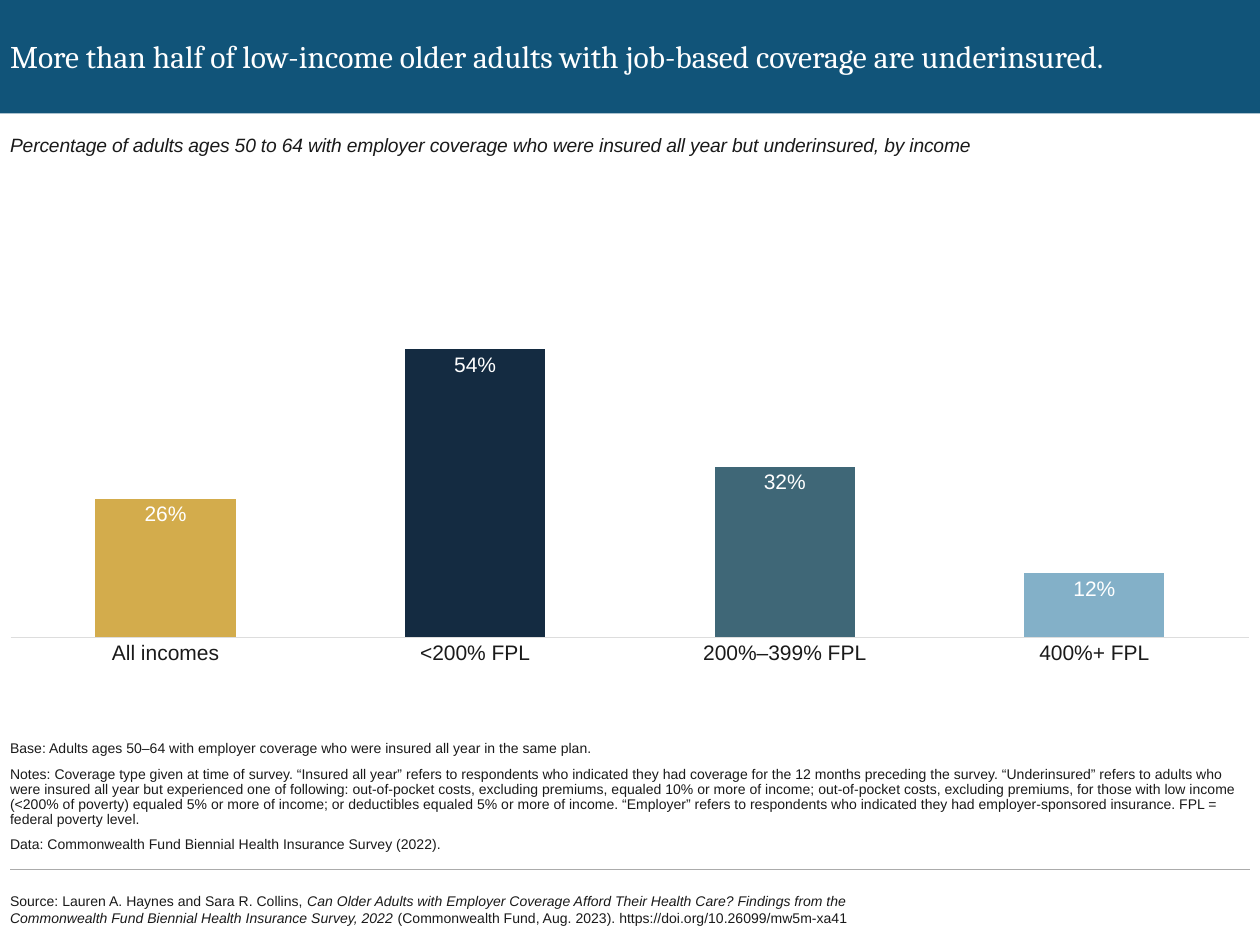
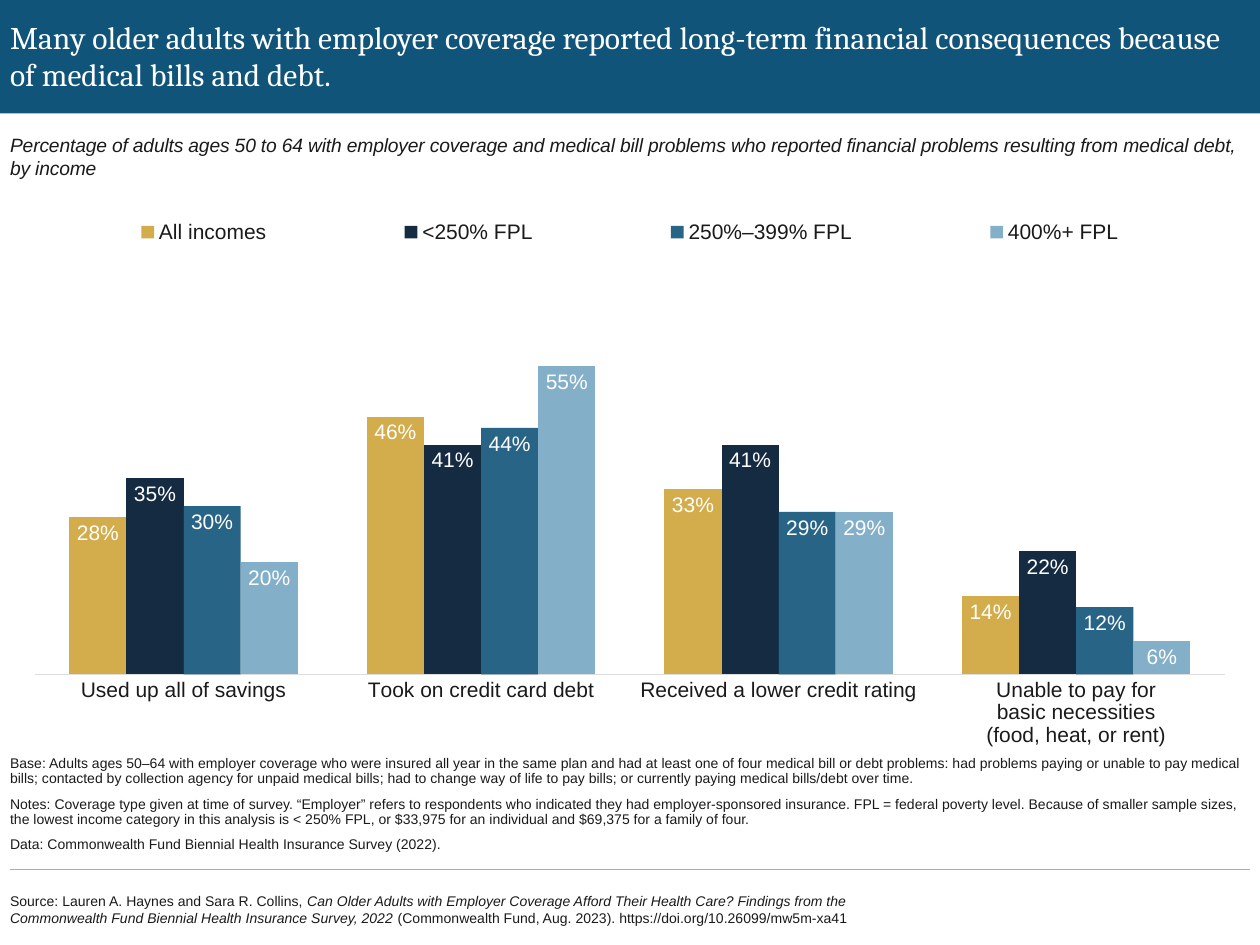
from dataclasses import dataclass

from lxml import etree
from pptx import Presentation
from pptx.chart.data import CategoryChartData
from pptx.dml.color import RGBColor
from pptx.enum.chart import XL_CHART_TYPE, XL_LABEL_POSITION, XL_LEGEND_POSITION, XL_TICK_MARK
from pptx.enum.shapes import MSO_CONNECTOR, MSO_SHAPE
from pptx.enum.text import MSO_ANCHOR, MSO_AUTO_SIZE, PP_ALIGN
from pptx.oxml.ns import qn
from pptx.util import Pt

COLUMNS = XL_CHART_TYPE.COLUMN_CLUSTERED
INSIDE_END = XL_LABEL_POSITION.INSIDE_END
LEGEND_TOP = XL_LEGEND_POSITION.TOP
NO_TICKS = XL_TICK_MARK.NONE
TOP, MIDDLE, BOTTOM = MSO_ANCHOR.TOP, MSO_ANCHOR.MIDDLE, MSO_ANCHOR.BOTTOM
TWO_CONTENT_LAYOUT = 3


@dataclass(frozen=True)
class Theme:
    # Colours
    band: str = "115479"
    ink: str = "1A1A1A"
    white: str = "FFFFFF"
    rule: str = "ABABAB"
    axis: str = "DDDDDD"
    gold: str = "D3AC4C"
    navy: str = "142B41"
    slate: str = "3F6777"
    sky: str = "83B0C8"
    # Fonts and sizes
    heading_font: str = "Cambria"
    body_font: str = "Arial"
    title_size: float = 18
    subtitle_size: float = 11
    chart_size: float = 12
    chart_base_size: float = 10
    note_size: float = 8
    # Lengths in points
    width: float = 720
    height: float = 540
    margin: float = 5.76
    band_height: float = 64.8

    @property
    def content_width(self):
        return self.width - 2 * self.margin


THEME = Theme()

SOURCE = [
    ("Source: Lauren A. Haynes and Sara R. Collins, ", False),
    ("Can Older Adults with Employer Coverage Afford Their Health Care? Findings from the\n"
     "Commonwealth Fund Biennial Health Insurance Survey, 2022", True),
    (" (Commonwealth Fund, Aug. 2023). https://doi.org/10.26099/mw5m-xa41", False),
]
DATA_NOTE = "Data: Commonwealth Fund Biennial Health Insurance Survey (2022)."


def set_font(font, size, color=THEME.ink, name=THEME.body_font, italic=False):
    font.size, font.name, font.italic = Pt(size), name, italic
    font.color.rgb = RGBColor.from_string(color)


def add_text(paragraph, text, spacing=None, **font_format):
    """Append text to a paragraph; each newline becomes a line break."""
    for number, line in enumerate(text.split("\n")):
        if number:
            paragraph.add_line_break()
        run = paragraph.add_run()
        run.text = line
        set_font(run.font, **font_format)
        if spacing is not None:
            run.font._element.set("spc", str(round(spacing * 100)))


def manual_layout(x, y, w, h, inner=False):
    """Return a chart layout element, in fractions of the chart area."""
    layout = etree.Element(qn("c:layout"))
    manual = etree.SubElement(layout, qn("c:manualLayout"))
    settings = [("layoutTarget", "inner")] if inner else []
    settings += [("xMode", "edge"), ("yMode", "edge"), ("x", x), ("y", y), ("w", w), ("h", h)]
    for tag, value in settings:
        etree.SubElement(manual, qn(f"c:{tag}")).set("val", str(value))
    return layout


class Deck:
    def __init__(self, theme):
        self.theme = theme
        self.presentation = Presentation()
        self.presentation.slide_width = Pt(theme.width)
        self.presentation.slide_height = Pt(theme.height)
        self.slide = None

    def new_slide(self, title, subtitle, notes):
        t = self.theme
        layout = self.presentation.slide_layouts[TWO_CONTENT_LAYOUT]
        self.slide = self.slide = self.presentation.slides.add_slide(layout)
        title_holder, subtitle_holder, notes_holder = self.slide.placeholders
        self.frame()
        self.fill_holder(title_holder, [title], -0.72, t.band_height, MIDDLE,
                         size=t.title_size, color=t.white, name=t.heading_font)
        self.fill_holder(subtitle_holder, [subtitle], 76.32, 23.04, TOP,
                         size=t.subtitle_size, italic=True, spacing=-0.1)
        self.fill_holder(notes_holder, notes, 448.56, 38.88, BOTTOM,
                         line_spacing=0.9, space_after=6, size=t.note_size)

    def frame(self):
        """Draw the title band, the footer rule and the source line."""
        t = self.theme
        shapes = self.slide.shapes
        band = shapes.add_shape(MSO_SHAPE.RECTANGLE, 0, 0, Pt(t.width), Pt(t.band_height))
        band.shadow.inherit = False
        band.fill.solid()
        band.fill.fore_color.rgb = RGBColor.from_string(t.band)
        band.line.fill.background()
        shapes._spTree.insert(2, band._element)  # behind the title

        rule = shapes.add_connector(MSO_CONNECTOR.STRAIGHT, Pt(t.width - t.margin), Pt(496.8),
                                    Pt(t.margin), Pt(496.8))
        rule.line.color.rgb = RGBColor.from_string(t.rule)
        rule.line.width = Pt(0.75)
        etree.SubElement(rule._element.spPr, qn("a:effectLst"))

        source = shapes.add_textbox(Pt(t.margin), Pt(503.28), Pt(561.6), Pt(33.12))
        self.set_frame(source.text_frame, MIDDLE)
        for text, italic in SOURCE:
            add_text(source.text_frame.paragraphs[0], text, size=t.note_size, italic=italic)

    def set_frame(self, frame, anchor):
        frame.word_wrap = True
        frame.auto_size = MSO_AUTO_SIZE.NONE
        frame.vertical_anchor = anchor
        frame.margin_left = frame.margin_right = frame.margin_top = frame.margin_bottom = 0

    def fill_holder(self, holder, texts, top, height, anchor,
                    line_spacing=1.0, space_after=0, **font_format):
        holder.left, holder.top = Pt(self.theme.margin), Pt(top)
        holder.width, holder.height = Pt(self.theme.content_width), Pt(height)
        frame = holder.text_frame
        self.set_frame(frame, anchor)
        for number, text in enumerate(texts):
            paragraph = frame.add_paragraph() if number else frame.paragraphs[0]
            properties = paragraph._p.get_or_add_pPr()
            properties.set("marL", "0")
            properties.set("indent", "0")
            etree.SubElement(properties, qn("a:buNone"))
            paragraph.alignment = PP_ALIGN.LEFT
            paragraph.line_spacing = line_spacing
            paragraph.space_before, paragraph.space_after = Pt(0), Pt(space_after)
            add_text(paragraph, text, **font_format)

    def column_chart(self, categories, series, height, maximum, plot_area,
                     colors, opacity=None, legend_area=None):
        """Colour by series, or by column when there is only one series."""
        t = self.theme
        data = CategoryChartData(number_format="0%")
        data.categories = categories
        for name, values in series.items():
            data.add_series(name, values)
        chart = self.slide.shapes.add_chart(COLUMNS, Pt(t.margin), Pt(99.36),
                                            Pt(t.content_width), Pt(height), data).chart
        set_font(chart.font, t.chart_base_size)
        chart.has_title = False

        # Axes
        chart.value_axis.visible = False
        chart.value_axis.has_major_gridlines = False
        chart.value_axis.minimum_scale, chart.value_axis.maximum_scale = 0, maximum
        category_axis = chart.category_axis
        category_axis.major_tick_mark = NO_TICKS
        category_axis.format.line.color.rgb = RGBColor.from_string(t.axis)
        category_axis.format.line.width = Pt(0.75)
        set_font(category_axis.tick_labels.font, t.chart_size)

        # Columns and their labels
        plot = chart.plots[0]
        plot.gap_width, plot.overlap = 121, 0
        plot.vary_by_categories = False
        columns = list(plot.series)
        if len(columns) == 1:
            self.fill_column(columns[0], t.band)
            columns = [columns[0].points[i] for i in range(len(categories))]
        for column, color in zip(columns, colors):
            self.fill_column(column, color, (opacity or {}).get(color))
        for group in plot.series:
            labels = group.data_labels
            labels.show_value = True
            labels.position = INSIDE_END
            labels.number_format, labels.number_format_is_linked = "0%", False
            set_font(labels.font, t.chart_size, t.white)

        # Plot and legend areas
        plot_element = chart._chartSpace.chart.plotArea
        for automatic in plot_element.findall(qn("c:layout")):
            plot_element.remove(automatic)
        plot_element.insert(0, manual_layout(*plot_area, inner=True))
        chart.has_legend = legend_area is not None
        if legend_area:
            legend = chart.legend
            legend.position = LEGEND_TOP
            legend.include_in_layout = False
            set_font(legend.font, t.chart_size)
            for automatic in legend._element.findall(qn("c:layout")):
                legend._element.remove(automatic)
            legend._element.find(qn("c:legendPos")).addnext(manual_layout(*legend_area))

    def fill_column(self, column, color, opacity=None):
        fill = column.format.fill
        fill.solid()
        fill.fore_color.rgb = RGBColor.from_string(color)
        if opacity:
            for solid_color in fill._xPr.iter(qn("a:srgbClr")):
                etree.SubElement(solid_color, qn("a:alpha")).set("val", str(opacity * 1000))


def main():
    t = THEME
    deck = Deck(t)

    # Underinsured by income
    deck.new_slide(
        "More than half of low-income older adults with job-based coverage are underinsured.",
        "Percentage of adults ages 50 to 64 with employer coverage who were insured all year "
        "but underinsured, by income",
        ["Base: Adults ages 50–64 with employer coverage who were insured all year in the same plan.",
         "Notes: Coverage type given at time of survey. “Insured all year” refers to respondents who "
         "indicated they had coverage for the 12 months preceding the survey. “Underinsured” refers to "
         "adults who were insured all year but experienced one of following: out-of-pocket costs, "
         "excluding premiums, equaled 10% or more of income; out-of-pocket costs, excluding premiums, "
         "for those with low income (<200% of poverty) equaled 5% or more of income; or deductibles "
         "equaled 5% or more of income. “Employer” refers to respondents who indicated they had "
         "employer-sponsored insurance. FPL = federal poverty level.",
         DATA_NOTE])
    deck.column_chart(
        ["All incomes", "<200% FPL", "200%–399% FPL", "400%+ FPL"],
        {"Series 1": (0.26, 0.54, 0.32, 0.12)},
        height=288, maximum=0.85, plot_area=(0, 0.02, 1, 0.9),
        colors=(t.gold, t.navy, t.slate, t.sky))

    # Financial consequences of medical debt
    deck.new_slide(
        "Many older adults with employer coverage reported long-term financial consequences "
        "because of medical bills and debt.",
        "Percentage of adults ages 50 to 64 with employer coverage and medical bill problems who "
        "reported financial problems resulting from medical debt, by income",
        ["Base: Adults ages 50–64 with employer coverage who were insured all year in the same plan "
         "and had at least one of four medical bill or debt problems: had problems paying or unable "
         "to pay medical bills; contacted by collection agency for unpaid medical bills; had to change "
         "way of life to pay bills; or currently paying medical bills/debt over time.",
         "Notes: Coverage type given at time of survey. “Employer” refers to respondents who indicated "
         "they had employer-sponsored insurance. FPL = federal poverty level. Because of smaller sample "
         "sizes, the lowest income category in this analysis is < 250% FPL, or $33,975 for an individual "
         "and $69,375 for a family of four.",
         DATA_NOTE])
    deck.column_chart(
        ["Used up all of savings", "Took on credit card debt", "Received a lower credit rating",
         "Unable to pay for\nbasic necessities\n(food, heat, or rent)"],
        {"All incomes": (0.28, 0.46, 0.33, 0.14),
         "<250% FPL": (0.35, 0.41, 0.41, 0.22),
         "250%–399% FPL": (0.30, 0.44, 0.29, 0.12),
         "400%+ FPL": (0.20, 0.55, 0.29, 0.06)},
        height=332.64, maximum=0.8, plot_area=(0.02, 0.09, 0.96, 0.77),
        colors=(t.gold, t.navy, t.band, t.sky), opacity={t.band: 90},
        legend_area=(0, 0.06, 1, 0.08))

    deck.presentation.save("out.pptx")


if __name__ == "__main__":
    main()
